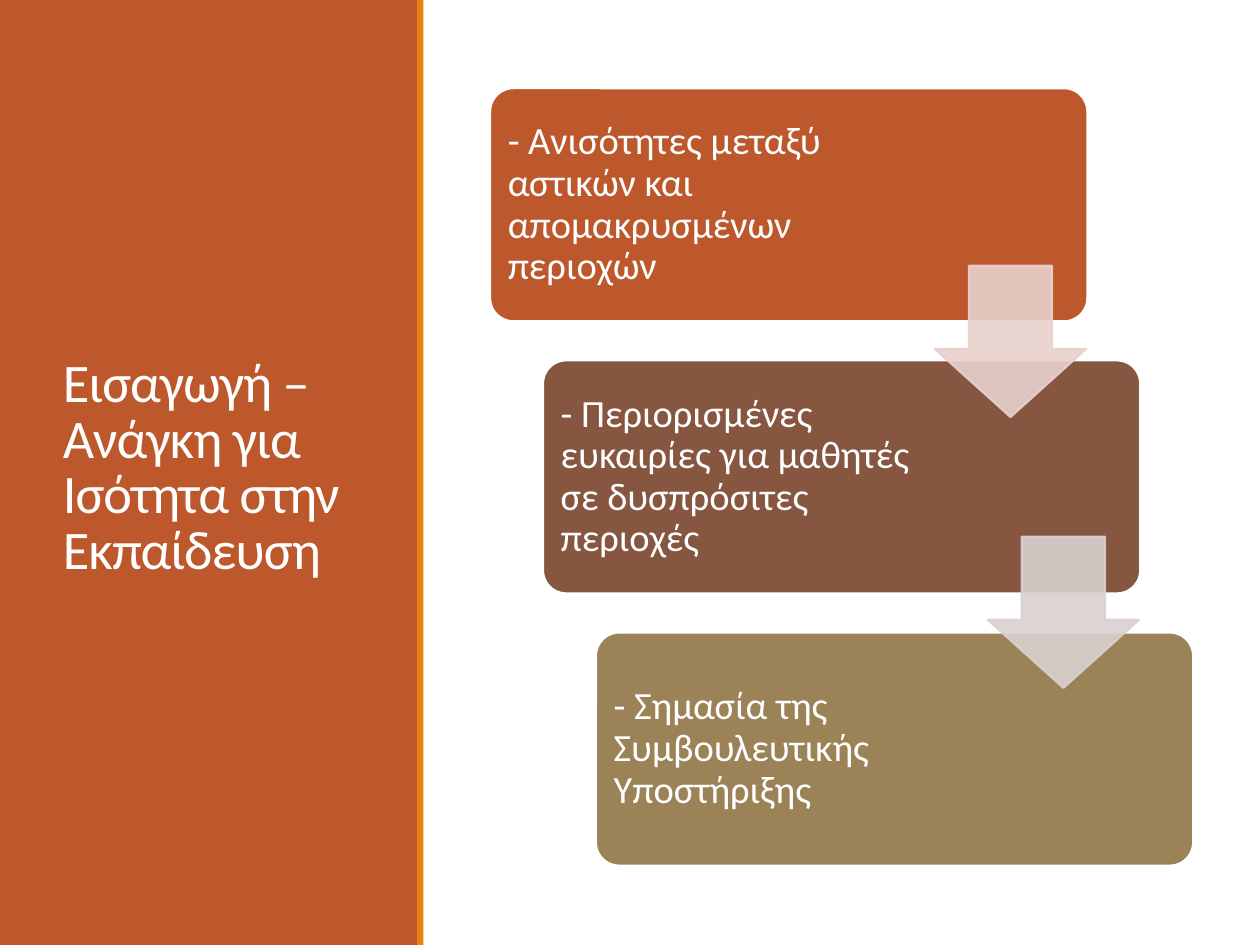
from lxml import etree
from pptx import Presentation
from pptx.dml.color import RGBColor
from pptx.enum.shapes import MSO_SHAPE
from pptx.enum.text import MSO_ANCHOR
from pptx.oxml.ns import qn
from pptx.util import Inches, Pt

RECT = MSO_SHAPE.RECTANGLE
ROUNDED = MSO_SHAPE.ROUNDED_RECTANGLE
DOWN_ARROW = MSO_SHAPE.DOWN_ARROW
MIDDLE = MSO_ANCHOR.MIDDLE

FONT = "Calibri"
COLORS = {
    "white": "FFFFFF",
    "rust": "BD582C",
    "orange": "E48312",
    "brown": "865640",
    "olive": "9B8357",
    "pink": "E8D1CD",
    "gray": "D9D1CF",
}

# Staircase of cards: first position, step and size
CARD_X, CARD_Y = 3.89, 0.7
STEP_X, STEP_Y = 0.42, 2.16
CARD_W, CARD_H = 4.74, 1.85
PAD = 0.05
ARROW_X, ARROW_Y = 7.42, 2.11
ARROW_STEP_Y, ARROW_SIZE = 2.15, 1.2

CARDS = [  # text, fill, text width
    ("- Ανισότητες μεταξύ αστικών και απομακρυσμένων περιοχών", "rust", 2.74),
    ("- Περιορισμένες ευκαιρίες για μαθητές σε δυσπρόσιτες περιοχές", "brown", 3.01),
    ("- Σημασία της Συμβουλευτικής Υποστήριξης", "olive", 3.01),
]
ARROWS = ["pink", "gray"]


def rgb(name):
    return RGBColor.from_string(COLORS[name])


def set_alpha(sp, percent):
    """Make the solid fill and the line of a shape translucent."""
    for color in sp._element.spPr.iter(qn("a:srgbClr")):
        etree.SubElement(color, qn("a:alpha")).set("val", str(percent * 1000))


def add_shape(s, kind, x, y, w, h, fill, line=None, adj=()):
    sp = s.shapes.add_shape(kind, Inches(x), Inches(y), Inches(w), Inches(h))
    sp.shadow.inherit = False
    sp.fill.solid()
    sp.fill.fore_color.rgb = rgb(fill)
    if line:
        sp.line.color.rgb = rgb(line)
        sp.line.width = Pt(1.25)
    else:
        sp.line.fill.background()
    for i, value in enumerate(adj):
        sp.adjustments[i] = value
    return sp


def add_text(s, text, x, y, w, h, size=22, inset=0.09, spacing=0.9, tracking=None):
    box = s.shapes.add_textbox(Inches(x), Inches(y), Inches(w), Inches(h))
    tf = box.text_frame
    tf.word_wrap = True
    tf.vertical_anchor = MIDDLE
    tf.margin_left = tf.margin_right = Inches(inset)
    tf.margin_top = tf.margin_bottom = Inches(inset)
    p = tf.paragraphs[0]
    p.line_spacing = spacing
    r = p.add_run()
    r.text = text
    r.font.name = FONT
    r.font.size = Pt(size)
    r.font.color.rgb = rgb("white")
    if tracking:
        r.font._element.set("spc", str(round(tracking * 100)))


def add_card(s, index, text, fill, text_w):
    x, y = CARD_X + index * STEP_X, CARD_Y + index * STEP_Y
    add_shape(s, ROUNDED, x, y, CARD_W, CARD_H, fill, line="white", adj=[0.1])
    add_text(s, text, x + PAD, y + PAD, text_w, CARD_H - 2 * PAD)


def add_arrow(s, index, color):
    x, y = ARROW_X + index * STEP_X, ARROW_Y + index * ARROW_STEP_Y
    sp = add_shape(s, DOWN_ARROW, x, y, ARROW_SIZE, ARROW_SIZE, color,
                   line=color, adj=[0.55, 0.45])
    set_alpha(sp, 90)


def main():
    prs = Presentation()
    prs.slide_width, prs.slide_height = Inches(10), Inches(7.5)
    s = prs.slides.add_slide(prs.slide_layouts[6])

    # Title panel with its accent stripe
    add_shape(s, RECT, 0, 0, 3.32, 7.5, "rust")
    add_text(s, "Εισαγωγή – Ανάγκη για Ισότητα στην Εκπαίδευση",
             0.4, 0.57, 2.53, 6.31, size=31, inset=0.1, spacing=0.85, tracking=-0.5)
    add_shape(s, RECT, 3.31, 0, 0.05, 7.5, "orange")

    # Cards, then the arrows that overlap them
    for i, card in enumerate(CARDS):
        add_card(s, i, *card)
    for i, color in enumerate(ARROWS):
        add_arrow(s, i, color)

    prs.save("out.pptx")


if __name__ == "__main__":
    main()
